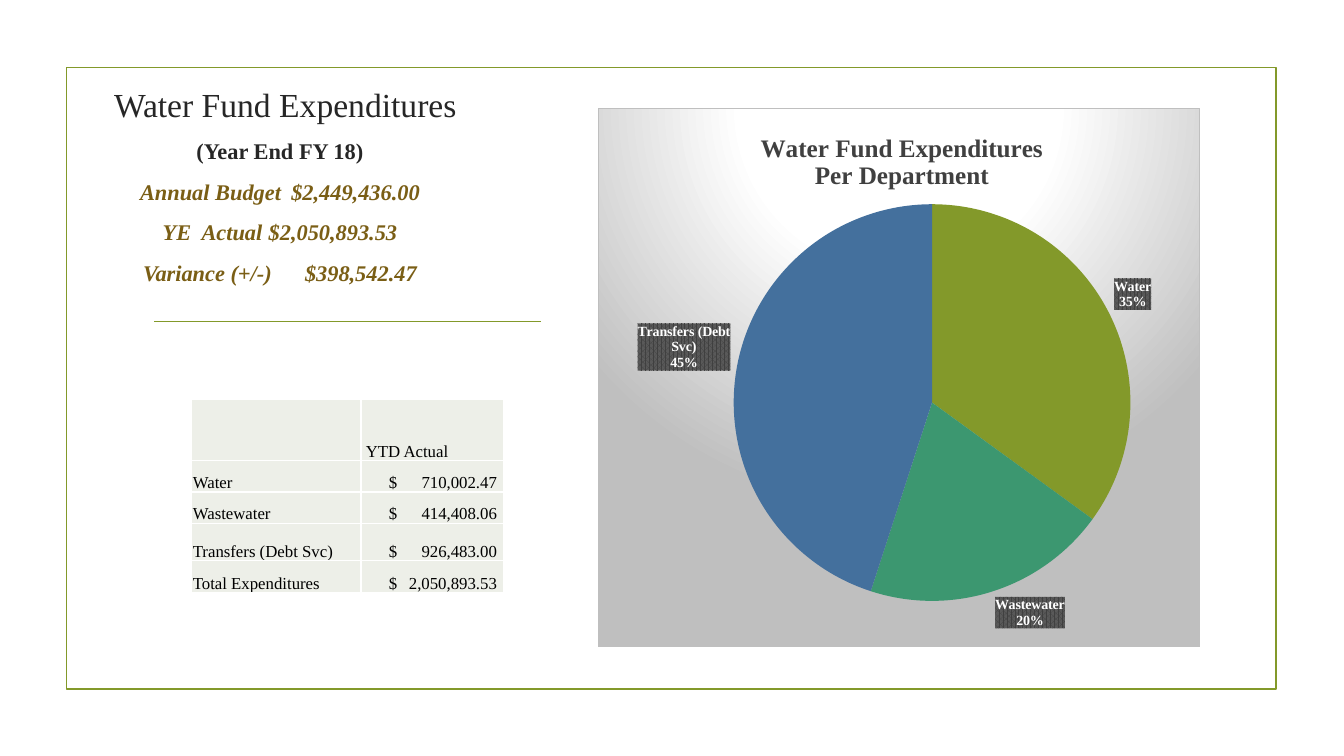
from lxml.etree import SubElement as Sub
from pptx import Presentation
from pptx.chart.data import CategoryChartData as ChartData
from pptx.dml.color import RGBColor as Rgb
from pptx.enum.chart import XL_CHART_TYPE as Kind, XL_LABEL_POSITION as Spot
from pptx.enum.shapes import MSO_CONNECTOR as Link, MSO_SHAPE as Form
from pptx.enum.text import MSO_ANCHOR as Anchor, PP_ALIGN as Align
from pptx.oxml import parse_xml
from pptx.oxml.ns import nsdecls, qn
from pptx.util import Cm, Pt

HUES = {"olive": "83992A", "green": "3C9770", "blue": "44709D",
        "ink": "262626", "gold": "7A5E15", "head": "404040",
        "cell": "EDEFE8", "white": "FFFFFF", "black": "000000",
        "grey": "BFBFBF", "tag": "595959"}
FACE = "Times New Roman"

FACTS = [("Annual Budget\t$2,449,436.00", 3.81),
         ("YE  Actual\t$2,050,893.53", 2.67),
         ("Variance (+/-)\t$398,542.47", 4.08)]
SHARES = [("Water", 35, "olive"), ("Wastewater", 20, "green"),
          ("Transfers (Debt Svc)", 45, "blue")]
ROWS = [("", "YTD Actual"),
        ("Water", "$\t710,002.47"),
        ("Wastewater", "$\t414,408.06"),
        ("Transfers (Debt Svc)", "$\t926,483.00"),
        ("Total Expenditures", "$\t2,050,893.53")]


def hue(name):
    return Rgb.from_string(HUES[name])


def put(item, **form):
    for key, value in form.items():
        setattr(item, key, value)


def style(font, size, tint, **form):
    put(font, name=FACE, size=Pt(size), **form)
    font.color.rgb = hue(tint)


def tab(para, place, side="l"):
    stops = Sub(para._p.get_or_add_pPr(), qn("a:tabLst"))
    Sub(stops, qn("a:tab"), pos=str(Cm(place)), algn=side)


def solid(name):
    return f'<a:solidFill><a:srgbClr val="{HUES[name]}"/></a:solidFill>'


def layout(x, y, size="", target=""):
    """Give the manual layout of a chart part, in shares of the chart."""
    return parse_xml(
        f'<c:layout {nsdecls("c")}><c:manualLayout>{target}'
        '<c:xMode val="edge"/><c:yMode val="edge"/>'
        f'<c:x val="{x}"/><c:y val="{y}"/>{size}'
        '</c:manualLayout></c:layout>')


class Page:
    def __init__(self, deck):
        self.slide = deck.slides.add_slide(deck.slide_layouts[5])
        self.shapes = self.slide.shapes

    def frame(self, *box):
        rect = self.shapes.add_shape(Form.RECTANGLE, *map(Cm, box))
        rect.shadow.inherit = False
        rect.fill.background()
        self.edge(rect.line)

    def edge(self, line):
        line.color.rgb = hue("olive")
        line.width = Pt(1.25)

    def rule(self, *ends):
        line = self.shapes.add_connector(Link.STRAIGHT, *map(Cm, ends))
        self.edge(line.line)
        Sub(line._element.spPr, qn("a:effectLst"))

    def title(self, text, *box):
        head = self.shapes.title
        left, top, width, height = map(Cm, box)
        put(head, left=left, top=top, width=width, height=height)
        frame = head.text_frame
        put(frame, text=text, vertical_anchor=Anchor.BOTTOM, word_wrap=True)
        para = frame.paragraphs[0]
        para.alignment = Align.CENTER
        style(para.runs[0].font, 24, "ink")

    def facts(self, lead, lines, *box):
        frame = self.shapes.add_textbox(*map(Cm, box)).text_frame
        frame.word_wrap = True
        for i, (text, stop) in enumerate([(lead, None), *lines]):
            para = frame.add_paragraph() if i else frame.paragraphs[0]
            if stop:
                tab(para, stop)
            put(para, alignment=Align.CENTER, space_after=Pt(6),
                space_before=Pt(3.8 if i else 0))
            run = para.add_run()
            run.text = text
            style(run.font, 16, "gold" if i else "ink",
                  bold=True, italic=bool(i))

    def pie(self, title, shares, *box):
        data = ChartData()
        data.categories = [name for name, _, _ in shares]
        data.add_series("Series 1", [value for _, value, _ in shares])
        chart = self.shapes.add_chart(Kind.PIE, *map(Cm, box), data).chart
        chart.has_legend = False
        style(chart.font, 10, "black")
        head = chart.chart_title
        head.text_frame.text = title
        for para in head.text_frame.paragraphs:
            style(para.runs[0].font, 18, "head", bold=True)
        head.include_in_layout = False
        for old in head._element.findall(qn("c:layout")):
            head._element.remove(old)
        head._element.find(qn("c:tx")).addnext(layout(0.265, 0.04))
        self.slices(chart.plots[0], shares)
        self.ground(chart)

    def slices(self, plot, shares):
        plot.vary_by_categories = True
        series = plot.series[0]
        for i, (_, _, tint) in enumerate(shares):
            fill = series.points[i].format.fill
            fill.solid()
            fill.fore_color.rgb = hue(tint)
        tags = series.data_labels
        style(tags.font, 10, "white", bold=True)
        put(tags, show_category_name=True, show_percentage=True,
            show_value=False, number_format="0%",
            number_format_is_linked=False, position=Spot.OUTSIDE_END)
        tags._element.find(qn("c:txPr")).addprevious(parse_xml(
            f'<c:spPr {nsdecls("c", "a")}><a:pattFill prst="pct75">'
            f'<a:fgClr><a:srgbClr val="{HUES["head"]}"/></a:fgClr>'
            f'<a:bgClr><a:srgbClr val="{HUES["tag"]}"/></a:bgClr>'
            '</a:pattFill></c:spPr>'))

    def ground(self, chart):
        """Place the pie and lay a round gradient behind it."""
        root = chart._chartSpace
        area = root.chart.plotArea
        for old in area.findall(qn("c:layout")):
            area.remove(old)
        area.insert(0, layout(0.225, 0.178,
                              '<c:w val="0.66"/><c:h val="0.737"/>',
                              '<c:layoutTarget val="inner"/>'))
        stops = "".join(
            f'<a:gs pos="{pos}000"><a:srgbClr val="{HUES[name]}"/></a:gs>'
            for pos, name in [(0, "white"), (39, "white"), (100, "grey")])
        root.chart.addnext(parse_xml(
            f'<c:spPr {nsdecls("c", "a")}><a:gradFill>'
            f'<a:gsLst>{stops}</a:gsLst><a:path path="circle">'
            '<a:fillToRect l="50000" t="-80000" r="50000" b="180000"/>'
            '</a:path></a:gradFill>'
            f'<a:ln w="9525">{solid("grey")}</a:ln></c:spPr>'))

    def table(self, rows, left, top, widths, heights):
        table = self.shapes.add_table(
            len(rows), len(widths), Cm(left), Cm(top),
            Cm(sum(widths)), Cm(sum(heights))).table
        put(table, first_row=False, horz_banding=False)
        for col, width in zip(table.columns, widths):
            col.width = Cm(width)
        for row, height, texts in zip(table.rows, heights, rows):
            row.height = Cm(height)
            for cell, text in zip(row.cells, texts):
                self.cell(cell, text)

    def cell(self, cell, text):
        money = "\t" in text
        inset = 0.7 if money else 0.12 if text == "YTD Actual" else 0.03
        put(cell, vertical_anchor=Anchor.BOTTOM, margin_left=Cm(inset),
            margin_right=Cm(0.03), margin_top=Cm(0.03), margin_bottom=0)
        para = cell.text_frame.paragraphs[0]
        if money:
            tab(para, 2.73, "r")
        if text:
            run = para.add_run()
            run.text = text
            style(run.font, 12, "black")
        props = cell._tc.get_or_add_tcPr()
        for side in ("lnL", "lnR", "lnT", "lnB"):
            props.append(parse_xml(f'<a:{side} {nsdecls("a")} w="12700">'
                                   f'{solid("white")}</a:{side}>'))
        cell.fill.solid()
        cell.fill.fore_color.rgb = hue("cell")


def main():
    deck = Presentation()
    put(deck, slide_width=Cm(33.87), slide_height=Cm(19.05))
    page = Page(deck)
    page.frame(1.68, 1.7, 30.48, 15.67)
    page.rule(3.89, 8.1, 13.64, 8.1)
    page.title("Water Fund Expenditures", 1.73, 1.52, 10.92, 1.75)
    page.facts("(Year End FY 18)", FACTS, 2.18, 3.33, 9.75, 5.03)
    page.pie("Water Fund Expenditures\nPer Department", SHARES,
             15.06, 2.72, 15.19, 13.59)
    page.table(ROWS, 4.83, 10.06, [4.27, 3.58],
               [1.55, 0.79, 0.79, 0.94, 0.81])
    deck.save("out.pptx")


if __name__ == "__main__":
    main()
